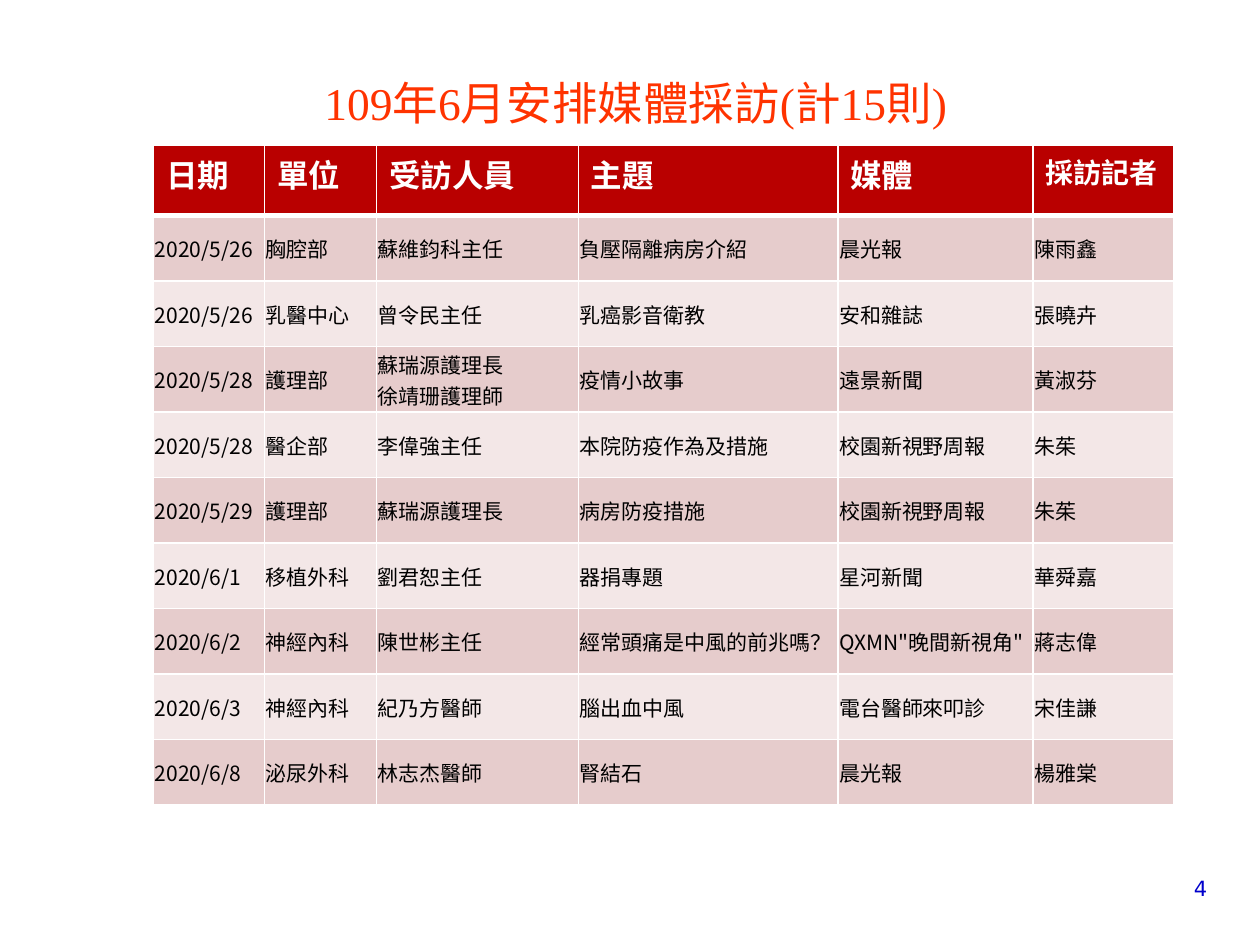
from lxml.etree import SubElement as Sub
from pptx import Presentation
from pptx.dml.color import RGBColor as RGB
from pptx.enum.text import MSO_ANCHOR as Anchor, MSO_AUTO_SIZE as Auto, PP_ALIGN as Align
from pptx.oxml.ns import qn
from pptx.util import Inches, Pt

WHITE = RGB(0xFF, 0xFF, 0xFF)
BLACK = RGB(0, 0, 0)
ORANGE = RGB(0xFF, 0x33, 0x00)
BLUE = RGB(0, 0, 0xCC)
RED = RGB(0xB9, 0, 0)
BANDS = RGB(0xE6, 0xCC, 0xCC), RGB(0xF3, 0xE7, 0xE7)

HEADS = ["日期", "單位", "受訪人員", "主題", "媒體", "採訪記者"]
COLS = [0.88, 0.89, 1.6, 2.06, 1.55, 1.12]
ROWS = [
    ["2020/5/26", "胸腔部", "蘇維鈞科主任", "負壓隔離病房介紹", "晨光報", "陳雨鑫"],
    ["2020/5/26", "乳醫中心", "曾令民主任", "乳癌影音衛教", "安和雜誌", "張曉卉"],
    ["2020/5/28", "護理部", "蘇瑞源護理長\n徐靖珊護理師", "疫情小故事", "遠景新聞", "黃淑芬"],
    ["2020/5/28", "醫企部", "李偉強主任", "本院防疫作為及措施", "校園新視野周報", "朱茱"],
    ["2020/5/29", "護理部", "蘇瑞源護理長", "病房防疫措施", "校園新視野周報", "朱茱"],
    ["2020/6/1", "移植外科", "劉君恕主任", "器捐專題", "星河新聞", "華舜嘉"],
    ["2020/6/2", "神經內科", "陳世彬主任", "經常頭痛是中風的前兆嗎？", "QXMN\"晚間新視角\"", "蔣志偉"],
    ["2020/6/3", "神經內科", "紀乃方醫師", "腦出血中風", "電台醫師來叩診", "宋佳謙"],
    ["2020/6/8", "泌尿外科", "林志杰醫師", "腎結石", "晨光報", "楊雅棠"],
]


def write(frame, text, size=12, face="Noto Sans CJK TC", color=BLACK, bold=False, align=Align.LEFT):
    frame.text = text
    for para in frame.paragraphs:
        para.alignment = align
        for run in para.runs:
            font = run.font
            font.size, font.name, font.bold = Pt(size), face, bold
            font.color.rgb = color
            if "CJK" in face:
                Sub(run._r.get_or_add_rPr(), qn("a:ea"), typeface=face)


def edge(cell, **widths):
    props = cell._tc.get_or_add_tcPr()
    for side in "LRTB":
        line = Sub(props, qn(f"a:ln{side}"), w=str(Pt(widths.get(side, 1))))
        fill = Sub(line, qn("a:solidFill"))
        Sub(fill, qn("a:srgbClr"), val=str(WHITE))


class Deck:
    def __init__(self):
        self.prs = Presentation()
        self.prs.slide_width, self.prs.slide_height = Inches(10), Inches(7.5)
        self.slide = self.prs.slides.add_slide(self.prs.slide_layouts[5])

    def title(self, text, x, y, w, h):
        box = self.slide.shapes.title
        box.left, box.top, box.width, box.height = map(Inches, (x, y, w, h))
        frame = box.text_frame
        frame.auto_size, frame.word_wrap = Auto.NONE, True
        frame.vertical_anchor = Anchor.BOTTOM
        write(frame, text, size=26, face="Times New Roman", color=ORANGE, align=Align.CENTER)

    def number(self, text, x, y, w, h):
        box = self.slide.shapes.add_textbox(*map(Inches, (x, y, w, h)))
        box.text_frame.word_wrap = True
        write(box.text_frame, text, face="DejaVu Sans", color=BLUE, align=Align.RIGHT)

    def table(self, x, y, head, step):
        size = sum(COLS), head + step * len(ROWS)
        grid = self.slide.shapes.add_table(len(ROWS) + 1, len(COLS), *map(Inches, (x, y, *size))).table
        grid.horz_banding = False
        for col, width in zip(grid.columns, COLS):
            col.width = Inches(width)
        for r, (row, texts) in enumerate(zip(grid.rows, [HEADS] + ROWS)):
            row.height = Inches(step if r else head)
            for c, text in enumerate(texts):
                if r:
                    self.entry(grid.cell(r, c), text, r)
                else:
                    self.head(grid.cell(r, c), text)

    def head(self, cell, text):
        size = 16 if text == HEADS[-1] else 18
        write(cell.text_frame, text, size=size, face="Noto Sans CJK SC", color=WHITE, bold=True, align=Align.JUSTIFY)
        edge(cell, B=3)
        self.paint(cell, RED)

    def entry(self, cell, text, r):
        write(cell.text_frame, text)
        cell.vertical_anchor = Anchor.MIDDLE
        cell.margin_left = cell.margin_right = cell.margin_top = Inches(0.01)
        cell.margin_bottom = 0
        edge(cell, T=3 if r == 1 else 1)
        self.paint(cell, BANDS[(r - 1) % 2])

    def paint(self, cell, color):
        cell.fill.solid()
        cell.fill.fore_color.rgb = color


def main():
    deck = Deck()
    deck.title("109年6月安排媒體採訪(計15則)", 0.67, 0.76, 8.75, 0.32)
    deck.number("4", 8.94, 6.9, 0.74, 0.3)
    deck.table(1.22, 1.15, 0.56, 0.52)
    deck.prs.save("out.pptx")


if __name__ == "__main__":
    main()
